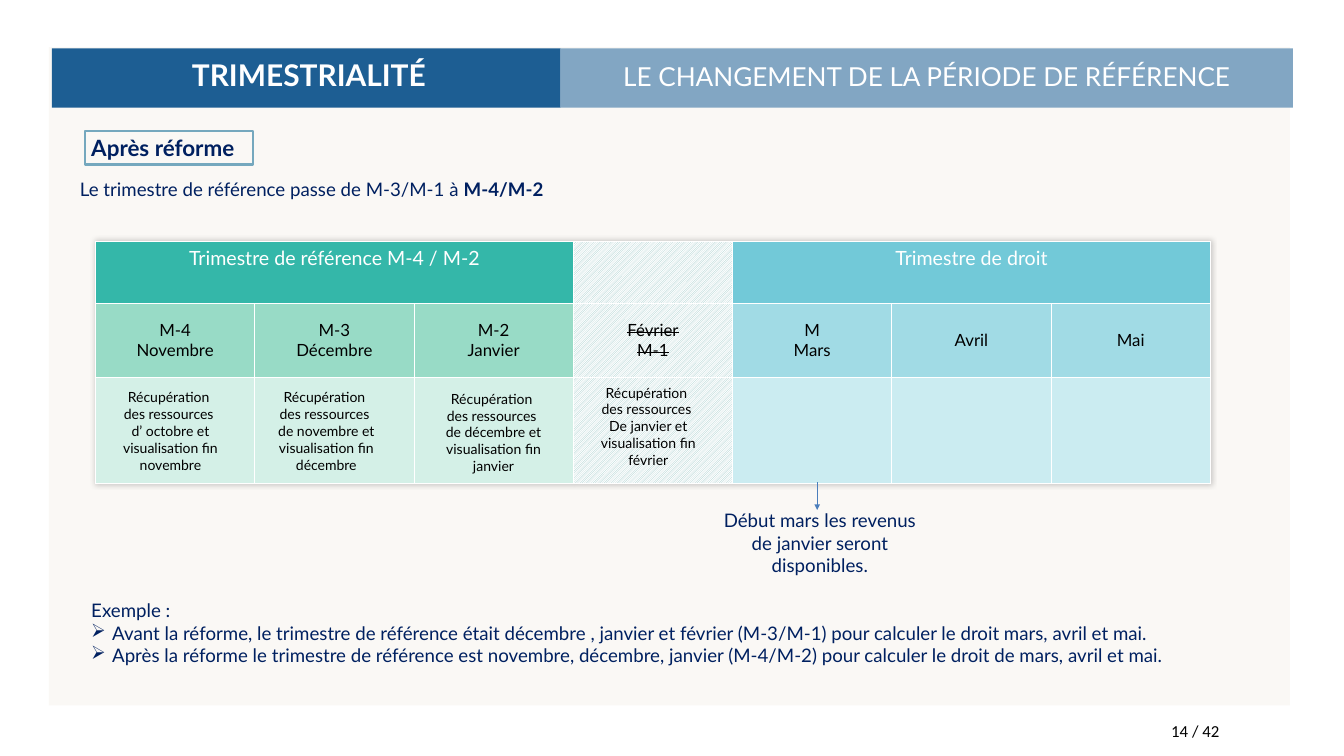
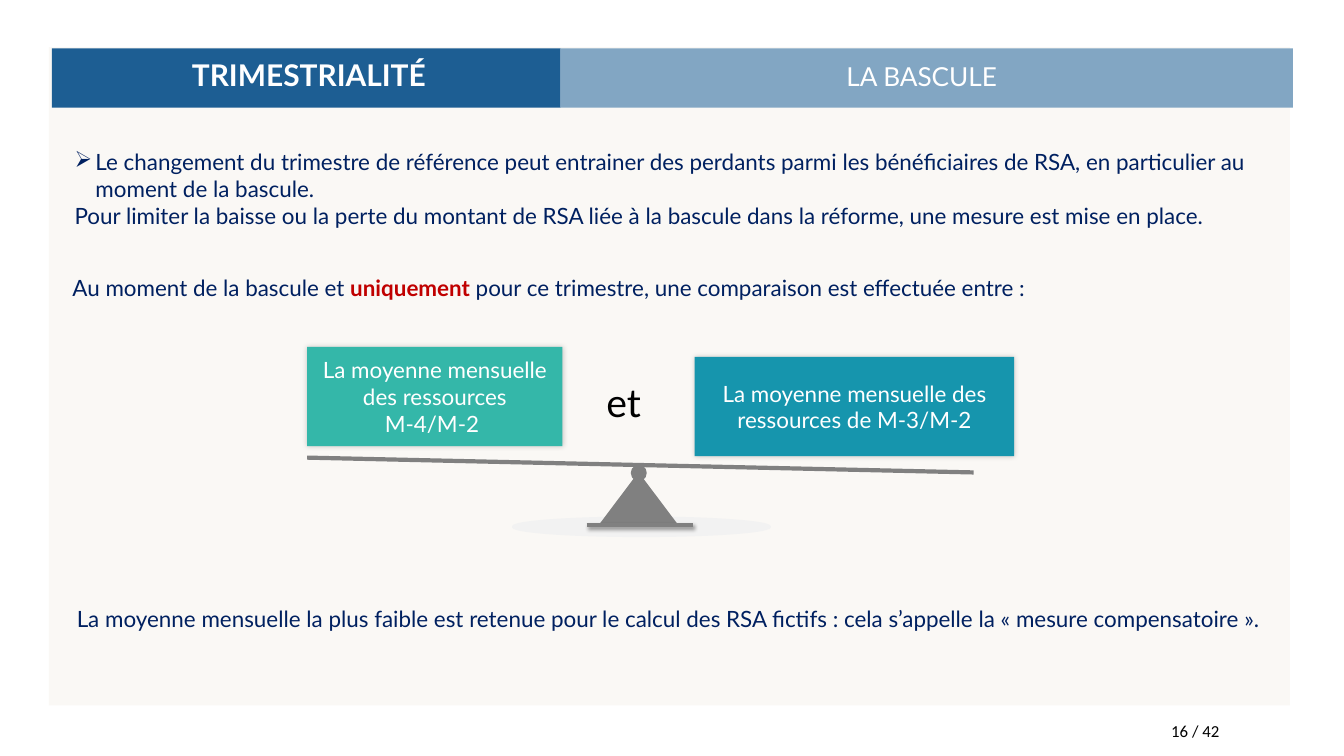
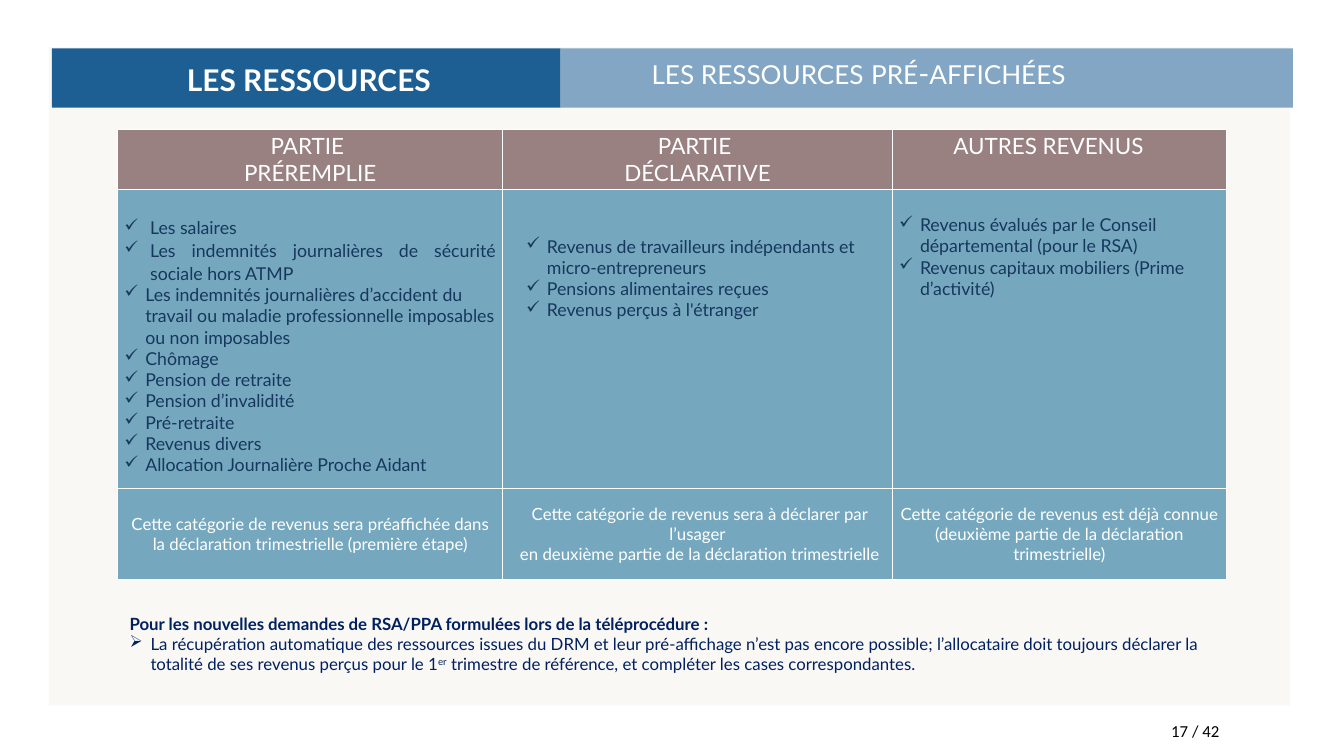
import lxml.etree
import pptx
import pptx.dml.color
import pptx.enum.dml
import pptx.enum.shapes
import pptx.enum.text
import pptx.oxml.ns
import pptx.util

Cm = pptx.util.Cm
Pt = pptx.util.Pt
RGB = pptx.dml.color.RGBColor.from_string
qn = pptx.oxml.ns.qn
SHAPE = pptx.enum.shapes.MSO_SHAPE
ALIGN = pptx.enum.text.PP_ALIGN
ANCHOR = pptx.enum.text.MSO_ANCHOR

COLORS = {
    "white": "FFFFFF", "black": "000000", "navy": "002060", "red": "C00000",
    "paper": "FAF8F5", "title": "1D5E93", "subtitle": "82A6C3",
    "green": "34B7A9", "mint": "98DBC6", "pale mint": "D4F0E7",
    "sky": "72C9D8", "light sky": "A1DBE5", "pale sky": "CBECF1",
    "hatch": "9FCBC9", "teal": "1695AD", "steel": "75A8BE",
    "mauve": "998181", "slate": "17375E", "arrow": "4B7EBC",
    "grey": "808080", "light grey": "F2F2F2",
}


def write(frame, text, size=20, color="navy", bold=False, font="Lato",
          align=ALIGN.LEFT, bullet=None, left=0.79, hang=0.79, spacing=None):
    paragraphs = [[(line, {})] for line in text.split("\n")] if isinstance(text, str) else [text]
    for spans in paragraphs:
        para = frame.add_paragraph() if frame.text else frame.paragraphs[0]
        para.alignment = align
        if spacing:
            para.line_spacing = spacing
        if bullet:
            properties = para._p.get_or_add_pPr()
            properties.set("marL", str(Cm(left)))
            properties.set("indent", str(-Cm(hang)))
            lxml.etree.SubElement(properties, qn("a:buChar")).set("char", bullet)
        for words, change in spans:
            span = para.add_run()
            span.text = words
            span.font.name = font
            span.font.size = Pt(change.get("size", size))
            span.font.bold = change.get("bold", bold)
            span.font.color.rgb = RGB(COLORS[change.get("color", color)])
            for name in ("strike", "baseline"):
                if name in change:
                    span._r.get_or_add_rPr().set(name, change[name])


def add_box(page, left, top, width, height, fill=None, line=None, weight=2, kind=SHAPE.RECTANGLE):
    box = page.shapes.add_shape(kind, Cm(left), Cm(top), Cm(width), Cm(height))
    box.shadow.inherit = False
    if fill:
        box.fill.solid()
        box.fill.fore_color.rgb = RGB(COLORS[fill])
    else:
        box.fill.background()
    if line:
        box.line.color.rgb = RGB(COLORS[line])
        box.line.width = Pt(weight)
    else:
        box.line.fill.background()
    box.text_frame.word_wrap = True
    box.text_frame.vertical_anchor = ANCHOR.TOP
    return box


deck = pptx.Presentation()
deck.slide_width = Cm(50.8)
deck.slide_height = Cm(28.58)

headings = [
    (14, "TRIMESTRIALITÉ", 2.44, Pt(26.6), "LE CHANGEMENT DE LA PÉRIODE DE RÉFÉRENCE", (21.18, 2.16, 27.69), ALIGN.CENTER),
    (16, "TRIMESTRIALITÉ", 2.44, Pt(26.6), "LA BASCULE", (21.18, 2.16, 27.31), ALIGN.CENTER),
    (17, "LES RESSOURCES", 2.21, None,
     [("LES RESSOURCES", {}), (" ", {"size": 32}), ("PRÉ", {}), ("-", {"size": 32}), ("AFFICHÉES", {})],
     (24.38, 1.93, 24.87), ALIGN.LEFT),
]
pages = []
for number, title, title_top, spacing, subtitle, place, align in headings:
    page = deck.slides.add_slide(deck.slide_layouts[6])
    pages.append(page)
    add_box(page, 1.85, 1.78, 46.91, 24.89, "paper")
    add_box(page, 1.96, 1.83, 19.23, 2.24, "title")
    add_box(page, 21.18, 1.83, 27.69, 2.24, "subtitle")
    write(add_box(page, 2.08, title_top, 19.2, 1.5).text_frame, title,
          size=32, color="white", bold=True, align=ALIGN.CENTER, spacing=spacing)
    write(add_box(page, *place, 1.5).text_frame, subtitle, size=28, color="white", align=align)
    write(add_box(page, 44.02, 27.13, 3.02, 1.07).text_frame, f"{number} / 42",
          size=18, color="black", font="Calibri")
period_page, switch_page, income_page = pages

quarter_frame = period_page.shapes.add_table(3, 7, Cm(3.61), Cm(9.12), Cm(42.14), Cm(9.14))
quarter_table = quarter_frame.table
for column in quarter_table.columns:
    column.width = Cm(6.02)
for row, height in zip(quarter_table.rows, (2.36, 2.77, 4.01)):
    row.height = Cm(height)
quarter_fills = [("green", "sky"), ("mint", "light sky"), ("pale mint", "pale sky")]
for row_index, (before, after) in enumerate(quarter_fills):
    for column_index in range(7):
        cell = quarter_table.cell(row_index, column_index)
        cell.margin_left = cell.margin_right = Cm(0.38)
        cell.margin_top = cell.margin_bottom = Cm(0.18)
        if column_index == 3:
            cell.fill.patterned()
            cell.fill.pattern = pptx.enum.dml.MSO_PATTERN.LIGHT_UPWARD_DIAGONAL
            cell.fill.fore_color.rgb = RGB(COLORS["hatch"])
            cell.fill.back_color.rgb = RGB(COLORS["white"])
        else:
            cell.fill.solid()
            cell.fill.fore_color.rgb = RGB(COLORS[before if column_index < 3 else after])
for first, heading in ((0, "Trimestre de référence M-4 / M-2"), (4, "Trimestre de droit")):
    cell = quarter_table.cell(0, first)
    cell.merge(quarter_table.cell(0, first + 2))
    write(cell.text_frame, heading, size=21, color="white", align=ALIGN.CENTER)
months = ["M-4\nNovembre", "M-3\nDécembre", "M-2\nJanvier", "Février\nM-1", "M\nMars", "Avril", "Mai"]
for column_index, month in enumerate(months):
    cell = quarter_table.cell(1, column_index)
    cell.vertical_anchor = ANCHOR.MIDDLE
    for line in month.split("\n"):
        change = {"strike": "sngStrike"} if column_index == 3 else {}
        write(cell.text_frame, [(line, change)], size=18, color="black", align=ALIGN.CENTER)

collections_by_month = [
    (4.17, 14.58, "d’ octobre et visualisation fin novembre"),
    (10.06, 14.58, "de novembre et visualisation fin décembre"),
    (16.38, 14.63, "de décembre et visualisation fin janvier"),
    (22.23, 14.4, "De janvier et visualisation fin février"),
]
for left, top, ending in collections_by_month:
    write(add_box(period_page, left, top, 4.55, 3.45).text_frame,
          "Récupération \ndes ressources \n" + ending, size=15, color="black", align=ALIGN.CENTER)

write(add_box(period_page, 3.2, 4.95, 6.35, 1.27, line="steel", weight=2.25).text_frame,
      "Après réforme", size=24, bold=True)
write(add_box(period_page, 2.77, 6.58, 25.4, 1.12).text_frame,
      [("Le trimestre de référence passe de M-3/M-1 à ", {}), ("M-4/M-2", {"bold": True})])
write(add_box(period_page, 26.75, 19.13, 8.48, 2.82).text_frame,
      "Début mars les revenus de janvier seront disponibles.", align=ALIGN.CENTER)
example = add_box(period_page, 3.2, 22.53, 45.47, 3.68).text_frame
write(example, "Exemple :")
write(example, "Avant la réforme, le trimestre de référence était décembre , janvier et février (M-3/M-1) "
      "pour calculer le droit mars, avril et mai.\n"
      "Après la réforme le trimestre de référence est novembre, décembre, janvier (M-4/M-2) "
      "pour calculer le droit de mars, avril et mai.", bullet="➢")

warning = add_box(switch_page, 2.57, 5.49, 45.9, 3.33).text_frame
write(warning, "Le changement du trimestre de référence peut entrainer des perdants parmi les bénéficiaires "
      "de RSA, en particulier au moment de la bascule.", size=24, bullet="➢")
write(warning, "Pour limiter la baisse ou la perte du montant de RSA liée à la bascule dans la réforme, "
      "une mesure est mise en place.", size=24)
write(add_box(switch_page, 2.49, 10.24, 45.97, 1.27).text_frame,
      [("Au moment de la bascule et ", {}), ("uniquement", {"color": "red", "bold": True}),
       (" pour ce trimestre, une comparaison est effectuée entre :", {})], size=24)
weights = []
for left, top, width, fill, text in [
    (11.61, 13.11, 9.65, "green", "La moyenne mensuelle des ressources M-4/M-2 "),
    (26.26, 13.49, 12.07, "teal", "La moyenne mensuelle des ressources de M-3/M-2"),
]:
    box = add_box(switch_page, left, top, width, 3.76, fill)
    box.text_frame.vertical_anchor = ANCHOR.MIDDLE
    write(box.text_frame, text, size=24, color="white", align=ALIGN.CENTER)
    weights.append(box)
write(add_box(switch_page, 22.66, 14.17, 2.21, 2.06).text_frame, "et ",
      size=42, color="black", align=ALIGN.CENTER)
add_box(switch_page, 19.38, 19.56, 9.73, 0.71, "light grey", "light grey", kind=SHAPE.OVAL)
add_box(switch_page, 22.66, 17.91, 2.95, 1.96, "grey", "grey", kind=SHAPE.ISOSCELES_TRIANGLE)
add_box(switch_page, 23.88, 17.6, 0.53, 0.56, "grey", "grey", kind=SHAPE.FLOWCHART_CONNECTOR)
write(add_box(switch_page, 1.27, 22.76, 47.96, 1.27).text_frame,
      "La moyenne mensuelle la plus faible est retenue pour le calcul des RSA fictifs : "
      "cela s’appelle la « mesure compensatoire ».", size=24, align=ALIGN.CENTER)

income_table = income_page.shapes.add_table(3, 3, Cm(4.45), Cm(4.88), Cm(41.9), Cm(17.04)).table
for column, width in zip(income_table.columns, (14.55, 14.73, 12.62)):
    column.width = Cm(width)
for row, height in zip(income_table.rows, (2.29, 11.3, 3.45)):
    row.height = Cm(height)
incomes = [
    ("PARTIE \nPRÉREMPLIE", 0.99, 0.79,
     "Les indemnités journalières d’accident du travail ou maladie professionnelle imposables ou non imposables\n"
     "Chômage\nPension de retraite\nPension d’invalidité\nPré-retraite\nRevenus divers\n"
     "Allocation Journalière Proche Aidant",
     "Cette catégorie de revenus sera préaffichée dans la déclaration trimestrielle (première étape)"),
    ("PARTIE \nDÉCLARATIVE", 1.74, 1.42,
     "Revenus de travailleurs indépendants et micro-entrepreneurs\n"
     "Pensions alimentaires reçues\nRevenus perçus à l'étranger",
     " Cette catégorie de revenus sera à déclarer par l’usager\n"
     " en deuxième partie de la déclaration trimestrielle"),
    ("AUTRES REVENUS", 0.93, 0.79,
     "Revenus évalués par le Conseil départemental (pour le RSA)\n"
     "Revenus capitaux mobiliers (Prime d’activité)",
     "Cette catégorie de revenus est déjà connue (deuxième partie de la déclaration trimestrielle)"),
]
for column_index, (heading, margin, left, items, note) in enumerate(incomes):
    heading_cell, items_cell, note_cell = [income_table.cell(row, column_index) for row in range(3)]
    for cell, fill in ((heading_cell, "mauve"), (items_cell, "steel"), (note_cell, "steel")):
        cell.fill.solid()
        cell.fill.fore_color.rgb = RGB(COLORS[fill])
    write(heading_cell.text_frame, heading, size=24, color="white", align=ALIGN.CENTER)
    items_cell.margin_top = Cm(margin)
    if column_index == 0:
        write(items_cell.text_frame,
              "Les salaires\nLes indemnités journalières de sécurité sociale hors ATMP",
              size=19, color="slate", align=ALIGN.JUSTIFY, bullet="✓", left=0.97, hang=0.97, spacing=1.07)
    write(items_cell.text_frame, items, size=19, color="slate", bullet="✓", left=left)
    note_cell.vertical_anchor = ANCHOR.MIDDLE
    write(note_cell.text_frame, note, size=18, color="white", align=ALIGN.CENTER)
income_table.cell(0, 2).margin_right = Cm(1.08)

requests = add_box(income_page, 4.65, 23.06, 42.39, 2.57).text_frame
write(requests, "Pour les nouvelles demandes de RSA/PPA formulées lors de la téléprocédure :", size=18, bold=True)
write(requests, [
    ("La récupération automatique des ressources issues du DRM et leur pré-affichage n’est pas encore possible; "
     "l’allocataire doit toujours déclarer la totalité de ses revenus perçus pour le 1", {}),
    ("er", {"baseline": "30000"}),
    (" trimestre de référence, et compléter les cases correspondantes.", {}),
], size=18, bullet="➢")

for table in (quarter_table, income_table):
    table.first_row = False
    table.horz_banding = False
    for cell in table.iter_cells():
        properties = cell._tc.get_or_add_tcPr()
        for position, side in enumerate(("lnL", "lnR", "lnT", "lnB")):
            border = lxml.etree.Element(qn("a:" + side), w=str(Pt(1)))
            paint = lxml.etree.SubElement(border, qn("a:solidFill"))
            lxml.etree.SubElement(paint, qn("a:srgbClr"), val=COLORS["white"])
            properties.insert(position, border)

effects = []
for page, start, end, color, weight in [
    (period_page, (30.89, 18.24), (30.89, 19.28), "arrow", 0.75),
    (switch_page, (11.61, 17.3), (36.8, 17.86), "grey", 4.5),
    (switch_page, (22.17, 19.86), (26.19, 19.86), "grey", 4.5),
]:
    line = page.shapes.add_connector(pptx.enum.shapes.MSO_CONNECTOR.STRAIGHT,
                                     *[Cm(value) for value in start + end])
    line.line.color.rgb = RGB(COLORS[color])
    line.line.width = Pt(weight)
    if color == "arrow":
        lxml.etree.SubElement(line.line._get_or_add_ln(), qn("a:tailEnd"), type="triangle")
    effects.append(lxml.etree.SubElement(line._element.spPr, qn("a:effectLst")))

table_effect = lxml.etree.Element(qn("a:effectLst"))
quarter_table._tbl.tblPr.insert(0, table_effect)
soft_effects = [table_effect] + [box._element.spPr.find(qn("a:effectLst")) for box in weights]
shadows = [(effect, 20, 6, 0, 225) for effect in soft_effects] + [(effects[-1], 40, 4, 3, 45)]
for effect, opacity, blur, distance, angle in shadows:
    shadow = lxml.etree.SubElement(effect, qn("a:outerShdw"), blurRad=str(Pt(blur)),
                                   dist=str(Pt(distance)), dir=str(angle * 60000))
    tint = lxml.etree.SubElement(shadow, qn("a:srgbClr"), val=COLORS["black"])
    lxml.etree.SubElement(tint, qn("a:alpha"), val=str(opacity * 1000))

deck.save("out.pptx")
